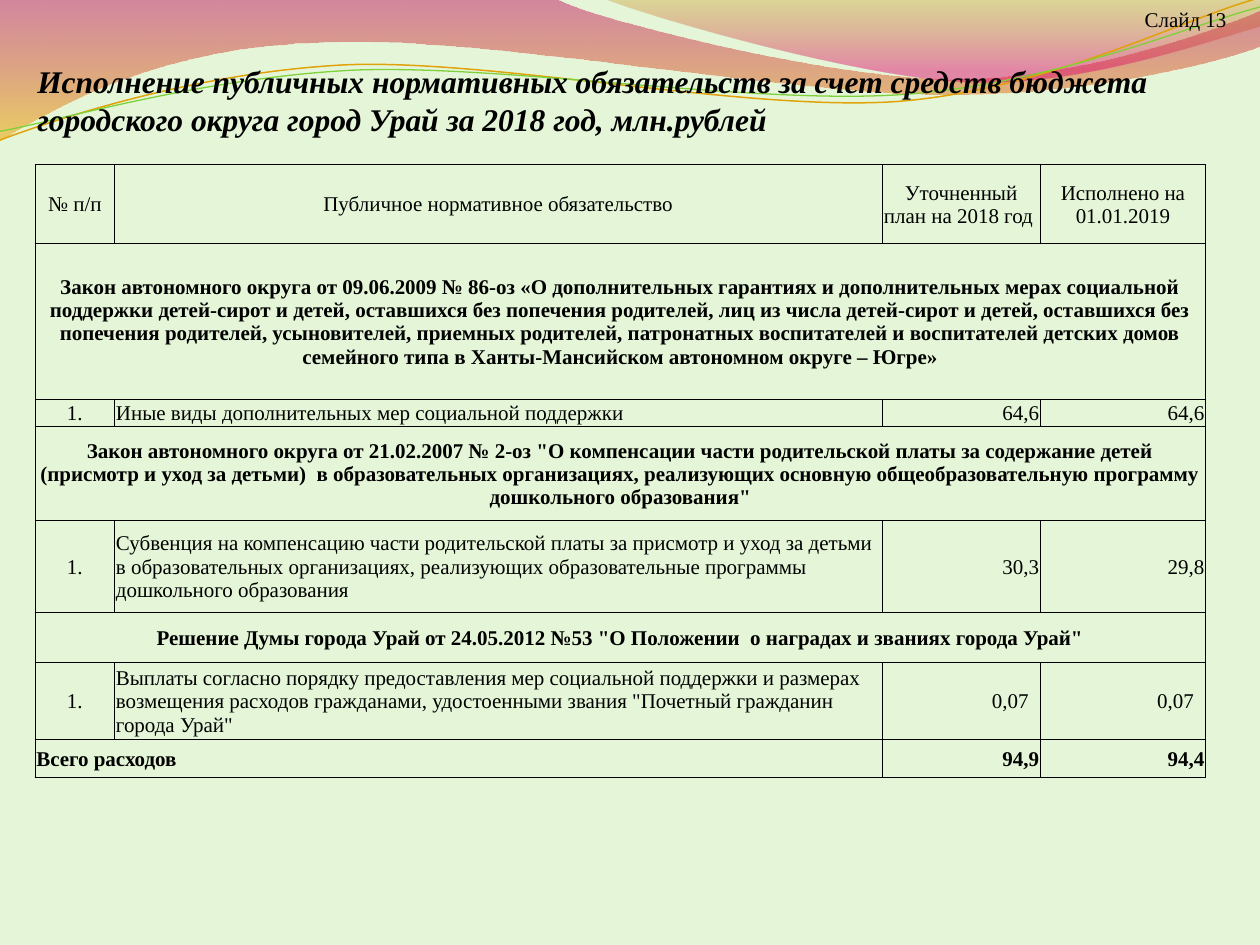
from dataclasses import dataclass
from typing import Optional

from lxml.etree import SubElement
from pptx import Presentation
from pptx.dml.color import RGBColor
from pptx.enum.text import MSO_ANCHOR, MSO_AUTO_SIZE, PP_ALIGN
from pptx.oxml.ns import qn
from pptx.util import Pt

FONT = "Times New Roman"
COLORS = {
    "background": "E5F6D8",
    "text": "000000",
    "border": "000000",
    "crimson": "BD0059",
    "amber": "F0AB00",
    "olive": "C38B00",
    "pink": "E1006B",
    "orange_line": "E0A209",
    "green_line": "7FD13B",
}
LEFT, CENTER, RIGHT = PP_ALIGN.LEFT, PP_ALIGN.CENTER, PP_ALIGN.RIGHT
CELL_MARGIN = 0.75
COLUMN_WIDTHS = (45.5, 438.5, 90.5, 94.5)


@dataclass
class GradientStop:
    position: int
    color: str
    opacity: int


@dataclass
class Wave:
    start: tuple
    segments: list
    stops: tuple = ()
    line_color: Optional[str] = None
    line_width: float = 0


@dataclass
class TableRow:
    height: float
    texts: tuple
    alignments: tuple
    spans: tuple = (1, 1, 1, 1)
    bold: bool = False
    filled: bool = True
    number_indent: float = 0


def section(height: float, text: str) -> TableRow:
    return TableRow(height, (text,), (CENTER,), (4,), bold=True)


def item(height: float, text: str, plan: str, actual: str, indent: float = 0) -> TableRow:
    return TableRow(height, ("1.", text, plan, actual),
                    (CENTER, LEFT, RIGHT, RIGHT), number_indent=indent)


WAVES = [
    Wave((0, 0), [(317, -1), (343, 12, 478, 45, 546, 45), (614, 45, 690, 19, 720, 6),
                  (721, 26), (708, 32, 626, 55, 537, 54), (448, 54, 275, 20, 185, 24),
                  (93, 26, 33, 60, -1, 81)],
         stops=(GradientStop(0, "crimson", 45), GradientStop(100, "amber", 55))),
    Wave((345, -1), [(366, 8, 491, 45, 554, 47), (616, 50, 692, 23, 720, 15), (720, 0)],
         stops=(GradientStop(0, "olive", 30), GradientStop(80, "pink", 45))),
    Wave((0, 80), [(35, 67, 114, 41, 199, 37), (284, 34, 427, 64, 513, 58),
                   (600, 51, 675, 11, 719, -1)],
         line_color="orange_line", line_width=0.85),
    Wave((0, 75), [(34, 69, 117, 44, 204, 40), (290, 37, 430, 60, 516, 54),
                   (602, 48, 678, 15, 720, 4)],
         line_color="green_line", line_width=0.75),
]

ROWS = [
    TableRow(45, ("№ п/п", "Публичное нормативное обязательство",
                  "Уточненный план на 2018 год ", "Исполнено на 01.01.2019"),
             (CENTER,) * 4, filled=False),
    section(89.2, "Закон автономного округа от 09.06.2009 № 86-оз «О дополнительных гарантиях "
                  "и дополнительных мерах социальной поддержки детей-сирот и детей, оставшихся "
                  "без попечения родителей, лиц из числа детей-сирот и детей, оставшихся без "
                  "попечения родителей, усыновителей, приемных родителей, патронатных "
                  "воспитателей и воспитателей детских домов семейного типа в "
                  "Ханты-Мансийском автономном округе – Югре»"),
    item(15.5, "Иные виды дополнительных мер социальной поддержки", "64,6", "64,6"),
    section(53.7, "Закон автономного округа от 21.02.2007 № 2-оз \"О компенсации части "
                  "родительской платы за содержание детей (присмотр и уход за детьми)  в "
                  "образовательных организациях, реализующих основную "
                  "общеобразовательную программу дошкольного образования\""),
    item(52.5, "Субвенция на компенсацию части родительской платы за присмотр и уход за "
               "детьми в образовательных организациях, реализующих образовательные "
               "программы дошкольного образования", "30,3", "29,8"),
    section(28.6, "Решение Думы города Урай от 24.05.2012 №53 \"О Положении  о наградах и "
                  "званиях города Урай\""),
    item(44, "Выплаты согласно порядку предоставления мер социальной поддержки и размерах "
             "возмещения расходов гражданами, удостоенными звания \"Почетный гражданин "
             "города Урай\"", "0,07", "0,07", indent=6),
    TableRow(21.7, ("Всего расходов", "94,9", "94,4"), (LEFT, RIGHT, RIGHT),
             (2, 1, 1), bold=True),
]


def rgb(name: str) -> RGBColor:
    return RGBColor.from_string(COLORS[name])


def bend_segments(shape, segments: list) -> None:
    lines = iter(list(shape.element.spPr.iter(qn("a:lnTo"))))
    for segment in segments:
        line = next(lines)
        if len(segment) == 2:
            continue
        line.tag = qn("a:cubicBezTo")
        for _ in range(2):
            extra = next(lines)
            line.append(extra[0])
            extra.getparent().remove(extra)


def set_gradient(shape, stops: tuple) -> None:
    shape.fill.gradient()
    gradient = shape.element.spPr.find(qn("a:gradFill"))
    for child in list(gradient):
        gradient.remove(child)
    stop_list = SubElement(gradient, qn("a:gsLst"))
    for stop in stops:
        entry = SubElement(stop_list, qn("a:gs"), pos=str(stop.position * 1000))
        color = SubElement(entry, qn("a:srgbClr"), val=COLORS[stop.color])
        SubElement(color, qn("a:alpha"), val=str(stop.opacity * 1000))
    SubElement(gradient, qn("a:lin"), ang="5400000", scaled="0")


def draw_wave(slide, wave: Wave) -> None:
    points = [(Pt(x), Pt(y)) for segment in wave.segments
              for x, y in zip(segment[::2], segment[1::2])]
    builder = slide.shapes.build_freeform(Pt(wave.start[0]), Pt(wave.start[1]))
    builder.add_line_segments(points, close=bool(wave.stops))
    shape = builder.convert_to_shape()
    bend_segments(shape, wave.segments)
    shape.shadow.inherit = False
    if wave.stops:
        set_gradient(shape, wave.stops)
        shape.line.fill.background()
    else:
        shape.fill.background()
        shape.line.color.rgb = rgb(wave.line_color)
        shape.line.width = Pt(wave.line_width)


def write_text(text_frame, text: str, size: float, alignment,
               bold: bool = False, italic: bool = False) -> None:
    paragraph = text_frame.paragraphs[0]
    paragraph.alignment = alignment
    run = paragraph.add_run()
    run.text = text
    run.font.name = FONT
    run.font.size = Pt(size)
    run.font.bold = bold
    run.font.italic = italic
    run.font.color.rgb = rgb("text")


def format_cell(cell, filled: bool) -> None:
    properties = cell._tc.get_or_add_tcPr()
    for side in ("a:lnL", "a:lnR", "a:lnT", "a:lnB"):
        line = SubElement(properties, qn(side), w=str(Pt(0.5)))
        fill = SubElement(line, qn("a:solidFill"))
        SubElement(fill, qn("a:srgbClr"), val=COLORS["border"])
    if filled:
        cell.fill.solid()
        cell.fill.fore_color.rgb = rgb("background")
    else:
        cell.fill.background()
    cell.vertical_anchor = MSO_ANCHOR.MIDDLE
    cell.margin_left = cell.margin_right = cell.margin_top = Pt(CELL_MARGIN)
    cell.margin_bottom = Pt(0)


def fill_row(table, index: int, row: TableRow) -> None:
    table.rows[index].height = Pt(row.height)
    for cell in table.rows[index].cells:
        format_cell(cell, row.filled)
    column = 0
    for text, alignment, span in zip(row.texts, row.alignments, row.spans):
        cell = table.cell(index, column)
        if span > 1:
            cell.merge(table.cell(index, column + span - 1))
        if alignment == RIGHT:
            cell.margin_right = Pt(CELL_MARGIN + row.number_indent)
        write_text(cell.text_frame, text, 12, alignment, row.bold)
        column += span


def draw_table(slide) -> None:
    frame = slide.shapes.add_table(len(ROWS), len(COLUMN_WIDTHS), Pt(20), Pt(94.2),
                                   Pt(sum(COLUMN_WIDTHS)), Pt(sum(r.height for r in ROWS)))
    table = frame.table
    table.first_row = table.horz_banding = False
    for column, width in zip(table.columns, COLUMN_WIDTHS):
        column.width = Pt(width)
    for index, row in enumerate(ROWS):
        fill_row(table, index, row)


def draw_title(slide) -> None:
    title = slide.shapes.title
    title.left, title.top, title.width, title.height = Pt(14.1), Pt(32), Pt(686), Pt(51)
    title.text_frame.auto_size = MSO_AUTO_SIZE.NONE
    title.text_frame.vertical_anchor = MSO_ANCHOR.TOP
    write_text(title.text_frame, "Исполнение публичных нормативных обязательств за счет средств "
               "бюджета городского округа город Урай за 2018 год, млн.рублей",
               18, LEFT, bold=True, italic=True)
    title.element.getparent().append(title.element)


def main() -> None:
    presentation = Presentation()
    presentation.slide_width, presentation.slide_height = Pt(720), Pt(540)
    slide = presentation.slides.add_slide(presentation.slide_layouts[5])
    slide.background.fill.solid()
    slide.background.fill.fore_color.rgb = rgb("background")
    for wave in WAVES:
        draw_wave(slide, wave)
    draw_title(slide)
    draw_table(slide)
    label = slide.shapes.add_textbox(Pt(646.5), Pt(0), Pt(62), Pt(21.5))
    label.text_frame.word_wrap = False
    write_text(label.text_frame, "Слайд 13", 12, CENTER)
    presentation.save("out.pptx")


if __name__ == "__main__":
    main()
